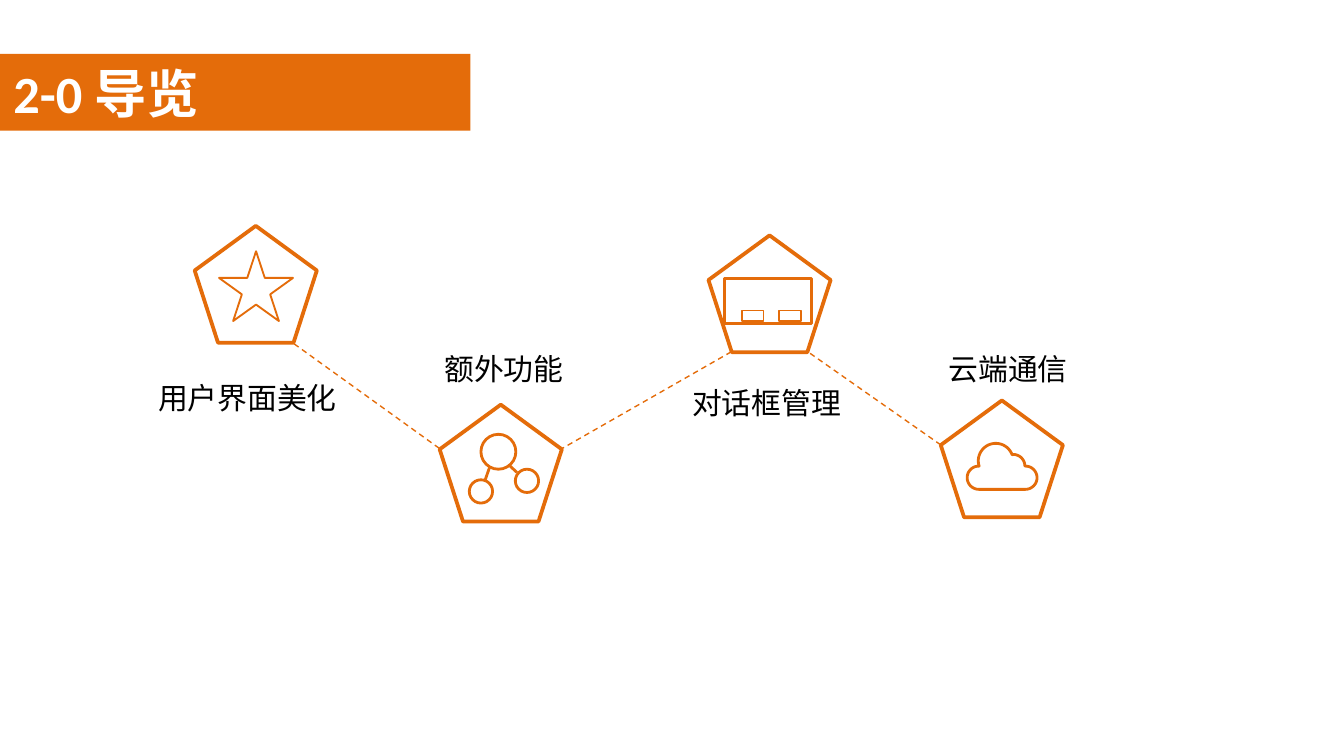
from math import cos, radians, sin

from lxml.etree import SubElement
from pptx import Presentation
from pptx.dml.color import RGBColor
from pptx.enum.dml import MSO_LINE
from pptx.enum.shapes import MSO_CONNECTOR, MSO_SHAPE
from pptx.enum.text import MSO_ANCHOR, MSO_AUTO_SIZE, PP_ALIGN
from pptx.oxml.ns import qn
from pptx.util import Cm, Pt

ORANGE = RGBColor(0xE4, 0x6C, 0x0A)
WHITE = RGBColor(0xFF, 0xFF, 0xFF)
BLACK = RGBColor(0, 0, 0)
CJK_FONT = "Noto Sans CJK SC"

TITLE_FORMAT = {"size": Pt(28), "name": "Calibri", "bold": True}
LABEL_FORMAT = {"size": Pt(16), "name": CJK_FONT, "bold": False}

# Topic label, label position, pentagon position (cm)
TOPICS = [
    ("用户界面美化", (2.74, 7.06), (3.68, 4.27)),
    ("额外功能", (8.15, 6.5), (8.31, 7.65)),
    ("对话框管理", (12.83, 7.14), (13.39, 4.45)),
    ("云端通信", (17.68, 6.5), (17.78, 7.57)),
]
LINKS = [
    (5.56, 6.5, 8.31, 8.48),
    (13.82, 6.65, 10.62, 8.48),
    (17.78, 8.41, 15.24, 6.63),
]
# Circles as centre x, centre y, radius; bonds as end points
MOLECULE = [(9.42, 8.54, 0.33), (9.09, 9.29, 0.22), (9.96, 9.09, 0.22)]
BONDS = [(9.25, 8.84, 9.17, 9.07), (9.64, 8.81, 9.77, 8.93)]
# Arcs as centre x, centre y, radius, start and end angle
CLOUD_ARCS = [
    (18.5, 9.03, 0.22, 90, 270),
    (18.82, 8.71, 0.33, 162, 340),
    (19.15, 8.81, 0.22, 270, 360),
    (19.38, 9.03, 0.22, 270, 450),
]


def write_text(tf, text, formats, color, align):
    p = tf.paragraphs[0]
    p.alignment = align
    r = p.add_run()
    r.text = text
    for name, value in formats.items():
        setattr(r.font, name, value)
    r.font.color.rgb = color
    SubElement(r.font._element, qn("a:ea")).set("typeface", CJK_FONT)


def set_outline(sp, width):
    sp.shadow.inherit = False
    sp.fill.background()
    sp.line.color.rgb = ORANGE
    sp.line.width = Pt(width)


def add_outline(s, kind, x, y, w, h, width):
    sp = s.shapes.add_shape(kind, Cm(x), Cm(y), Cm(w), Cm(h))
    set_outline(sp, width)


def add_line(s, ends, width, dash=None):
    sp = s.shapes.add_connector(MSO_CONNECTOR.STRAIGHT, *map(Cm, ends))
    sp.line.color.rgb = ORANGE
    sp.line.width = Pt(width)
    if dash:
        sp.line.dash_style = dash
    SubElement(sp._element.spPr, qn("a:effectLst"))


def add_title(s, text):
    sp = s.shapes.title
    sp.left, sp.top, sp.width, sp.height = Cm(0), Cm(1.02), Cm(8.89), Cm(1.45)
    sp.fill.solid()
    sp.fill.fore_color.rgb = ORANGE
    tf = sp.text_frame
    tf.auto_size = MSO_AUTO_SIZE.NONE
    tf.vertical_anchor = MSO_ANCHOR.MIDDLE
    write_text(tf, text, TITLE_FORMAT, WHITE, PP_ALIGN.JUSTIFY)


def add_label(s, text, x, y):
    tf = s.shapes.add_textbox(Cm(x), Cm(y), Cm(5.41), Cm(0.94)).text_frame
    tf.word_wrap = True
    write_text(tf, text, LABEL_FORMAT, BLACK, PP_ALIGN.LEFT)


def add_molecule(s):
    for x, y, radius in MOLECULE:
        add_outline(s, MSO_SHAPE.OVAL, x - radius, y - radius,
                    2 * radius, 2 * radius, 1.5)
    for bond in BONDS:
        add_line(s, bond, 1.5)


def add_dialog(s):
    add_outline(s, MSO_SHAPE.RECTANGLE, 13.69, 5.26, 1.65, 0.86, 1.5)
    for x in (14.02, 14.73):
        add_outline(s, MSO_SHAPE.RECTANGLE, x, 5.87, 0.41, 0.2, 1)


def add_cloud(s):
    steps = 24
    points = []
    for x, y, radius, start, end in CLOUD_ARCS:
        for i in range(steps + 1):
            angle = radians(start + (end - start) * i / steps)
            points.append((Cm(x + radius * cos(angle)),
                           Cm(y + radius * sin(angle))))
    builder = s.shapes.build_freeform(*points[0])
    builder.add_line_segments(points[1:], close=True)
    set_outline(builder.convert_to_shape(), 1.5)


def main():
    prs = Presentation()
    prs.slide_width, prs.slide_height = Cm(25.4), Cm(14.29)
    s = prs.slides.add_slide(prs.slide_layouts[5])
    add_title(s, "2-0 导览")

    # Dashed route between the topics
    for link in LINKS:
        add_line(s, link, 0.75, MSO_LINE.DASH)

    # Topics
    for text, label_at, pentagon_at in TOPICS:
        add_outline(s, MSO_SHAPE.REGULAR_PENTAGON, *pentagon_at, 2.31, 2.21, 2)
        add_label(s, text, *label_at)

    # Icons
    add_outline(s, MSO_SHAPE.STAR_5_POINT, 4.14, 4.75, 1.4, 1.32, 1)
    add_molecule(s)
    add_dialog(s)
    add_cloud(s)

    prs.save("out.pptx")


if __name__ == "__main__":
    main()
